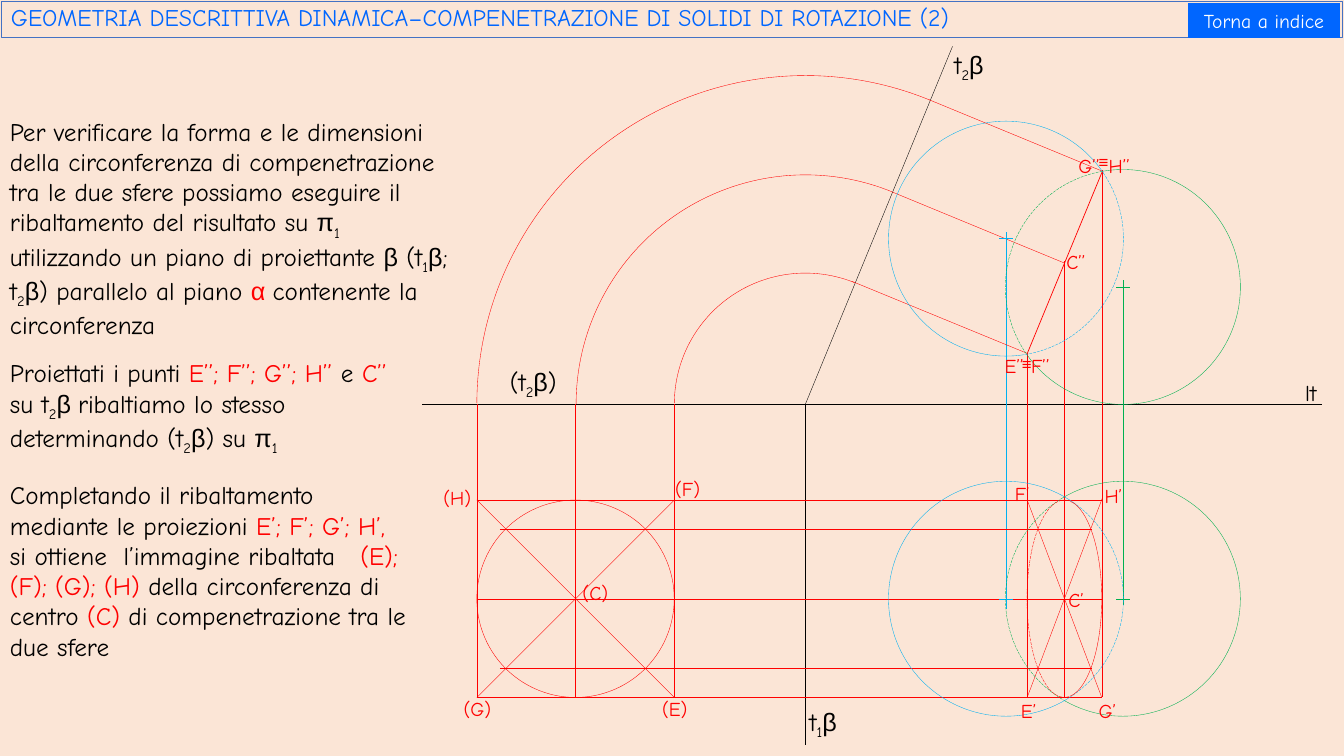
from lxml import etree
from pptx import Presentation
from pptx.dml.color import RGBColor
from pptx.enum.dml import MSO_LINE
from pptx.enum.shapes import MSO_CONNECTOR, MSO_SHAPE
from pptx.enum.text import MSO_ANCHOR, MSO_AUTO_SIZE, PP_ALIGN
from pptx.oxml.ns import qn
from pptx.util import Pt

ARC, RECT, OVAL = MSO_SHAPE.ARC, MSO_SHAPE.RECTANGLE, MSO_SHAPE.OVAL
BUTTON = MSO_SHAPE.ACTION_BUTTON_CUSTOM
STRAIGHT = MSO_CONNECTOR.STRAIGHT
DASH = MSO_LINE.LONG_DASH
MIDDLE = MSO_ANCHOR.MIDDLE
LEFT, CENTER = PP_ALIGN.LEFT, PP_ALIGN.CENTER
GROW = MSO_AUTO_SIZE.SHAPE_TO_FIT_TEXT

COLORS = {
    "paper": "FBE5D6", "black": "000000", "red": "FF0000", "sky": "00B0F0",
    "green": "00B050", "blue": "0066FF", "frame": "4472C4", "white": "FFFFFF",
}
RGB = {name: RGBColor.from_string(code) for name, code in COLORS.items()}

prs = Presentation()
prs.slide_width, prs.slide_height = Pt(960), Pt(540)
slide = prs.slides.add_slide(prs.slide_layouts[6])
slide.background.fill.solid()
slide.background.fill.fore_color.rgb = RGB["paper"]
shapes = slide.shapes


def write(frame, paras, size, color, align=LEFT):
    frame.word_wrap = True
    for i, runs in enumerate(paras):
        para = frame.paragraphs[0] if i == 0 else frame.add_paragraph()
        para.alignment = align
        para.font.size = Pt(size)
        para.font.name = "Comic Neue"
        para.font.color.rgb = RGB[color]
        for text, style in runs:
            run = para.add_run()
            run.text = text
            if "greek" in style:
                run.font.name = "Arial"
            if "red" in style:
                run.font.color.rgb = RGB["red"]
            if "sub" in style:
                run.font._element.set("baseline", "-25000")


def outline(kind, x, y, rx, ry, color):
    shape = shapes.add_shape(kind, Pt(x - rx), Pt(y - ry), Pt(2 * rx), Pt(2 * ry))
    shape.shadow.inherit = False
    shape.fill.background()
    shape.line.color.rgb = RGB[color]
    shape.line.width = Pt(0.25)
    return shape


ground, axis = 288.7, 575.3
left, mid, right = 340.6, 411.1, 481.7
top, core, base = 357.1, 427.7, 498.2
east, west, heart = 787, 733.7, 760.3
sky_x, green_x = 718.6, 802.1
sky_y, green_y = 170.5, 205

lines = [
    (301.6, ground, 944.6, ground, "black"),
    (680.4, 33.1, axis, ground, "black"),
    (axis, ground, axis, 532.1, "black"),
    (sky_x, sky_y, sky_x, 434.9, "sky"),
    (green_x, green_y, green_x, 432, "green"),
    (east, 121.7, east, base, "red"),
    (west, 252, west, base, "red"),
    (heart, 186.5, heart, base, "red"),
    (west, top, east, base, "red"),
    (787.7, 355, west, base, "red"),
    (left, top, right, base, "red"),
    (left, base, right, top, "red"),
    (608.4, 200.9, 734.4, 252.7, "red"),
    (636.5, 136.8, heart, 187.9, "red"),
    (663.8, 71.3, 787.7, 122.4, "red"),
]
lines += [(x, ground, x, base, "red") for x in (left, mid, right)]
lines += [(left, y, east, y, "red") for y in (top, core, base)]
lines += [(357.1, y, 779.8, y, "red") for y in (378, 477.4)]
for x, y, color in [(sky_x, sky_y, "sky"), (sky_x, core, "sky"),
                    (green_x, green_y, "green"), (green_x, core, "green")]:
    lines += [(x - 4.7, y, x + 4.7, y, color), (x, y - 4.7, x, y + 4.7, color)]
lines.append((787.7, 121.7, west, 252.7, "red"))

for x1, y1, x2, y2, color in lines:
    line = shapes.add_connector(STRAIGHT, Pt(x1), Pt(y1), Pt(x2), Pt(y2))
    line.line.color.rgb = RGB[color]
    line.line.width = Pt(0.25)
    etree.SubElement(line._element.spPr, qn("a:effectLst"))
line.line.width = Pt(0.5)

ball = 83.9
arcs = [
    (axis, ground, 234.7, 234.7, 180.2, 292.3, "red", False),
    (axis, ground, 163.8, 163.8, 180.1, 292, "red", False),
    (axis, ground, 93.6, 93.6, 180.4, 292, "red", False),
]
for x, y, rx, ry, start, end, color in [
    (green_x, core, ball, ball, 239.1, 119.1, "green"),
    (sky_x, core, ball, ball, 58, 304.9, "sky"),
    (green_x, green_y, ball, ball, 260.1, 145.5, "green"),
    (sky_x, sky_y, ball, ball, 81, 326, "sky"),
    (heart, core, 26.7, 70.5, 275, 85, "red"),
]:
    arcs.append((x, y, rx, ry, start, end, color, False))
    arcs.append((x, y, rx, ry, end, start, color, True))
for x, y, rx, ry, start, end, color, hidden in arcs:
    arc = outline(ARC, x, y, rx, ry, color)
    arc.adjustments[0] = start * 0.6
    arc.adjustments[1] = end * 0.6
    if hidden:
        arc.line.dash_style = DASH
outline(OVAL, mid, core, 70.5, 70.5, "red")

title = outline(RECT, 480, 14, 479.2, 12.6, "frame")
title.line.width = Pt(0.75)
title.text_frame.vertical_anchor = MIDDLE
write(title.text_frame, [[("GEOMETRIA DESCRITTIVA DINAMICA–COMPENETRAZIONE DI SOLIDI DI ROTAZIONE (2)", "")]], 17, "blue")
title.text_frame.paragraphs[0].line_spacing = 0.8

button = outline(BUTTON, 902.9, 14.8, 54, 12.6, "blue")
button.fill.solid()
button.fill.fore_color.rgb = RGB["blue"]
button.line.fill.background()
button.text_frame.vertical_anchor = MIDDLE
write(button.text_frame, [[("Torna a indice", "")]], 14, "white", CENTER)

beta = ("β", "greek")
one, two = ("1", "sub"), ("2", "sub")
check = [
    ("Per verificare la forma e le dimensioni della circonferenza di compenetrazione tra le due sfere possiamo eseguire il ribaltamento del risultato su ", ""),
    ("π", "greek"), one, (" utilizzando un piano di proiettante ", ""), beta,
    (" (t", ""), one, beta, ("; t", ""), two, beta,
    (") parallelo al piano ", ""), ("α ", "greek red"),
    ("contenente la circonferenza", ""),
]
project = [
    ("Proiettati i punti ", ""), ("E’’; F’’; G’’; H’’ ", "red"), ("e", ""),
    (" C’’ ", "red"), ("su t", ""), two, ("β ", "greek"),
    ("ribaltiamo lo stesso determinando (t", ""), two, beta,
    (") su ", ""), ("π", "greek"), one,
]
finish = [
    ("Completando il ribaltamento mediante le proiezioni ", ""),
    ("E’; F’; G’; H’,", "red"),
]
result = [
    ("si ottiene  l’immagine ribaltata   ", ""), ("(E); (F); (G); (H) ", "red"),
    ("della circonferenza di centro ", ""), ("(C) ", "red"),
    ("di compenetrazione tra le due sfere", ""),
]
texts = [
    (0, 79.2, 326.9, 159.8, [check], 18, "black"),
    (0, 252, 285.1, 72.7, [project], 18, "black"),
    (0, 339.1, 307.4, 138.2, [finish, result], 18, "black"),
    (925.2, 267.1, 34.6, 26.6, [[("lt", "")]], 16, "black"),
    (571, 501.1, 42.5, 28.8, [[("t", ""), one, beta]], 18, "black"),
    (674.6, 31.7, 56.9, 28.8, [[("t", ""), two, beta]], 18, "black"),
    (357.1, 257.8, 56.9, 28.8, [[("(t", ""), two, beta, (")", "")]], 18, "black"),
]
for name, x, y, wide in [
    ("C’", 756, 416.2, 33.8), ("H’", 781.9, 342, 33.8), ("G’", 777.6, 495.4, 33.8),
    ("F’", 717.8, 340.6, 33.8), ("E’", 722.2, 495.4, 33.8),
    ("C’’", 754.6, 175, 38.9), ("H’’", 784.8, 106.6, 36.7), ("G’’", 763.2, 106.6, 34),
    ("F’’", 729.4, 249.1, 34), ("E’’", 710.6, 249.1, 34),
    ("(C)", 409, 411.1, 38.9), ("(H)", 309.6, 343.4, 36.7), ("(G)", 324, 494.6, 36.7),
    ("(E)", 465.8, 494.6, 34), ("(F)", 475.2, 337, 34),
]:
    texts.append((x, y, wide, 24.5, [[(name, "")]], 14, "red"))
for x, y in [(777.6, 105.1), (722.9, 249.1)]:
    texts.append((x, y, 24.5, 21.6, [[("≡", "greek")]], 12, "red"))

for x, y, wide, high, paras, size, color in texts:
    box = shapes.add_textbox(Pt(x), Pt(y), Pt(wide), Pt(high))
    write(box.text_frame, paras, size, color)
    box.text_frame.auto_size = GROW

prs.save("out.pptx")
